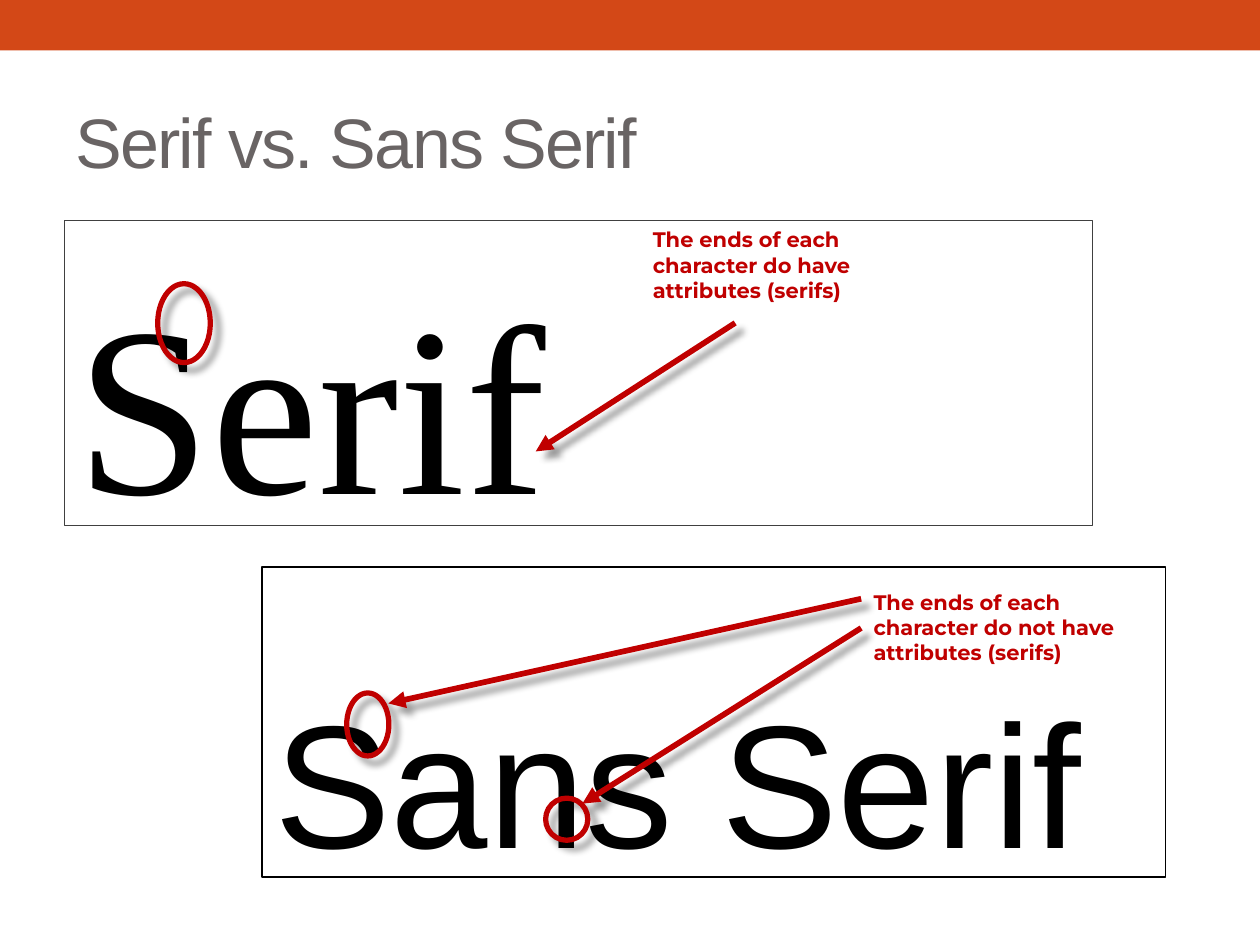
from lxml.etree import SubElement
from pptx import Presentation
from pptx.dml.color import RGBColor
from pptx.enum.shapes import MSO_CONNECTOR as CONN, MSO_SHAPE as SHAPE
from pptx.enum.text import MSO_ANCHOR as ANCHOR, PP_ALIGN as ALIGN
from pptx.oxml.ns import qn
from pptx.util import Cm, Pt

ORANGE, GREY, RED, BLACK, WHITE = "D34817", "696464", "C00000", "000000", "FFFFFF"

# Lengths in cm: boxes are (left, top, width, height), arrows (x1, y1, x2, y2)
TITLE = "Serif vs. Sans Serif"
SANS = dict(
    word="Sans Serif", font="Arial", size=100, inset=2.14,
    box=(5.28, 11.43, 18.21, 6.25), fill=WHITE, line=BLACK,
    rings=[(6.99, 13.97, 0.85, 1.27), (11, 16.09, 0.85, 0.85)],
    arrows=[(17.36, 12.07, 7.83, 14.18), (17.36, 12.66, 11.74, 16.2)],
    note="The ends of each character do not have attributes (serifs)",
    note_box=(17.36, 11.76, 5.66, 1.8))
SERIF = dict(
    word="Serif", font="Times New Roman", size=138, inset=0.65,
    box=(1.3, 4.45, 20.72, 6.14), fill=None, line="404040",
    rings=[(3.18, 5.72, 1.06, 1.59)],
    arrows=[(14.82, 6.51, 10.8, 9.1)],
    note="The ends of each character do have attributes (serifs)",
    note_box=(12.91, 4.45, 5.66, 1.8))


def rgb(color):
    return RGBColor.from_string(color)


def cm(lengths):
    return [Cm(v) for v in lengths]


def add_shape(shapes, kind, box, fill=None, line=None, width=0.75):
    sp = shapes.add_shape(kind, *cm(box))
    sp.shadow.inherit = False
    if fill:
        sp.fill.solid()
        sp.fill.fore_color.rgb = rgb(fill)
    else:
        sp.fill.background()
    if line:
        sp.line.color.rgb = rgb(line)
        sp.line.width = Pt(width)
    else:
        sp.line.fill.background()
    return sp


def write(sp, text, font, size, color, bold=False, anchor=ANCHOR.TOP):
    tf = sp.text_frame
    tf.word_wrap = True
    tf.vertical_anchor = anchor
    p = tf.paragraphs[0]
    p.alignment = ALIGN.LEFT
    r = p.add_run()
    r.text = text
    p.font.name, p.font.size, p.font.bold = font, Pt(size), bold
    p.font.color.rgb = rgb(color)
    return r


def add_shadow(sp):
    """Soft shadow down to the right."""
    props = sp._element.spPr
    effects = props.find(qn("a:effectLst"))
    if effects is None:
        effects = SubElement(props, qn("a:effectLst"))
    shadow = SubElement(effects, qn("a:outerShdw"), blurRad=str(Pt(4)),
                        dist=str(Pt(6)), dir="2700000", algn="tl", rotWithShape="0")
    color = SubElement(shadow, qn("a:srgbClr"), val=BLACK)
    SubElement(color, qn("a:alpha"), val="40000")


def add_arrow(shapes, ends):
    arrow = shapes.add_connector(CONN.STRAIGHT, *cm(ends))
    arrow.line.color.rgb = rgb(RED)
    arrow.line.width = Pt(3.25)
    SubElement(arrow.line._get_or_add_ln(), qn("a:tailEnd"), type="triangle")
    add_shadow(arrow)


def add_sample(shapes, sample):
    """Framed word with ringed letter ends, arrows and a note."""
    frame = add_shape(shapes, SHAPE.RECTANGLE, sample["box"], sample["fill"], sample["line"])
    frame.text_frame.margin_top = Cm(sample["inset"])
    frame.text_frame.margin_bottom = 0
    write(frame, sample["word"], sample["font"], sample["size"], BLACK)
    for box in sample["rings"]:
        add_shadow(add_shape(shapes, SHAPE.OVAL, box, line=RED, width=3))
    for ends in sample["arrows"]:
        add_arrow(shapes, ends)
    note = shapes.add_textbox(*cm(sample["note_box"]))
    write(note, sample["note"], "Montserrat", 12, RED, bold=True)


def main():
    prs = Presentation()
    prs.slide_width, prs.slide_height = Cm(25.4), Cm(19.05)
    s = prs.slides.add_slide(prs.slide_layouts[6])
    add_shape(s.shapes, SHAPE.RECTANGLE, (0, 0, 25.4, 1.02), ORANGE)
    title = s.shapes.add_textbox(*cm((1.27, 1.47, 22.86, 2.74)))
    r = write(title, TITLE, "Arial", 40, GREY, anchor=ANCHOR.MIDDLE)
    r._r.get_or_add_rPr().set("spc", "-100")
    add_sample(s.shapes.add_group_shape().shapes, SANS)
    add_sample(s.shapes, SERIF)
    prs.save("out.pptx")


if __name__ == "__main__":
    main()
